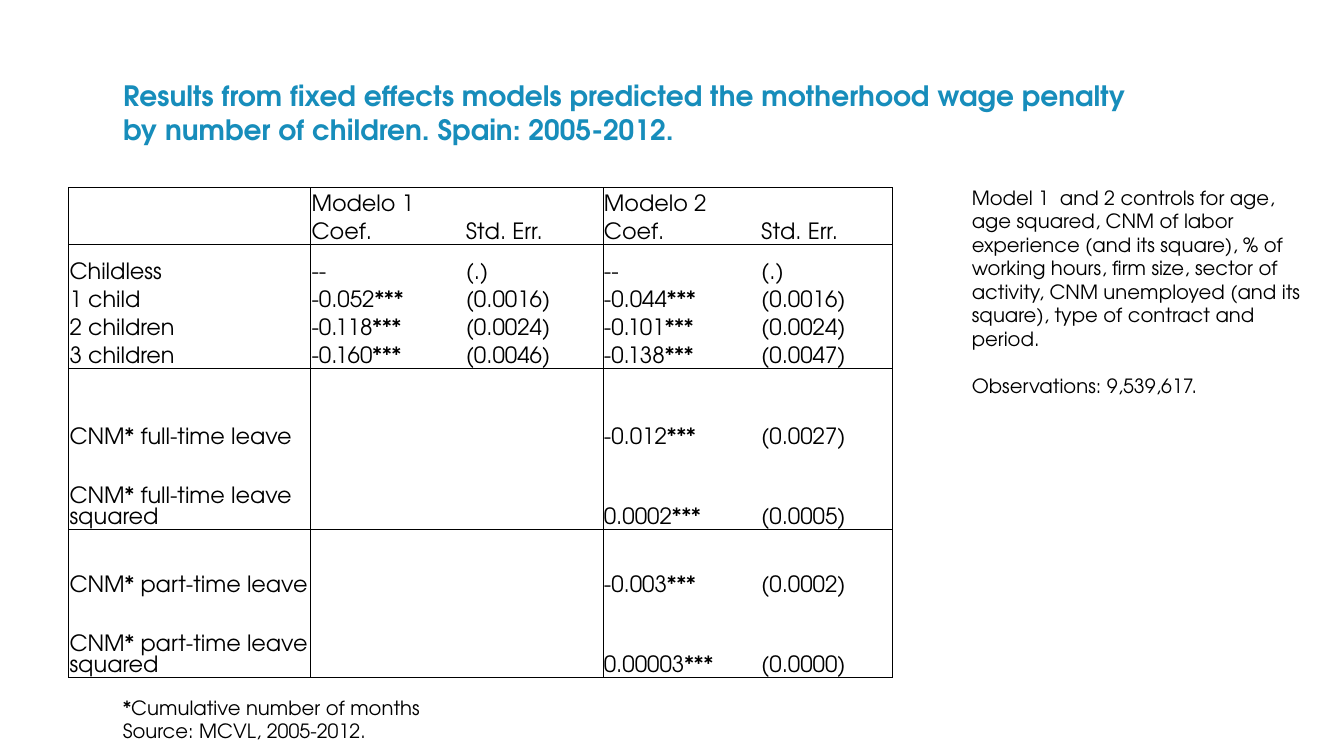
from dataclasses import dataclass

import lxml.etree
import pptx
import pptx.dml.color
import pptx.enum.text
import pptx.oxml.ns
import pptx.util

EMU_PER_PX = 9144  # 100 px to the inch
FONT = "TeX Gyre Adventor"
BLACK = "000000"
BLUE = "178DBB"

TITLE = (
    "Results from fixed effects models predicted the motherhood wage penalty "
    "by number of children. Spain: 2005-2012."
)
CONTROLS = (
    "Model 1  and 2 controls for age, age squared, CNM of labor experience "
    "(and its square), % of working hours, firm size, sector of activity, "
    "CNM unemployed (and its square), type of contract and period."
)

COLUMN_WIDTHS = (240, 153, 137, 156, 131)
RULED_COLUMNS = {0, 1, 3, 5}  # column edges with a vertical line
RULED_ROWS = {0, 2, 6, 8, 10}  # row edges with a horizontal line


@dataclass(frozen=True)
class Note:
    left: int
    top: int
    width: int
    height: int
    paragraphs: tuple[str, ...]
    gap: int = 0


@dataclass(frozen=True)
class ResultRow:
    height: int
    cells: tuple[str, str, str, str, str]


NOTES = (
    Note(954, 179, 357, 222, (CONTROLS, "Observations: 9,539,617."), gap=17),
    Note(112, 685, 533, 57, ("*Cumulative number of months", "Source: MCVL, 2005-2012.")),
)

ROWS = (
    ResultRow(28, ("", "Modelo 1", "", "Modelo 2", "")),
    ResultRow(28, ("", "Coef.", "Std. Err.", "Coef.", "Std. Err.")),
    ResultRow(40, ("Childless", "--", "(.)", "--", "(.)")),
    ResultRow(27, ("1 child", "-0.052***", "(0.0016)", "-0.044***", "(0.0016)")),
    ResultRow(27, ("2 children", "-0.118***", "(0.0024)", "-0.101***", "(0.0024)")),
    ResultRow(27, ("3 children", "-0.160***", "(0.0046)", "-0.138***", "(0.0047)")),
    ResultRow(80, ("CNM* full-time leave", "", "", "-0.012***", "(0.0027)")),
    ResultRow(80, ("CNM* full-time leave squared", "", "", "0.0002***", "(0.0005)")),
    ResultRow(67, ("CNM* part-time leave", "", "", "-0.003***", "(0.0002)")),
    ResultRow(80, ("CNM* part-time leave squared", "", "", "0.00003***", "(0.0000)")),
)


def px(length: int) -> pptx.util.Emu:
    return pptx.util.Emu(length * EMU_PER_PX)


def color(value: str) -> pptx.dml.color.RGBColor:
    return pptx.dml.color.RGBColor.from_string(value)


def write(para, text: str, *, size: int, fill: str = BLACK, bold: bool = False) -> None:
    para.alignment = pptx.enum.text.PP_ALIGN.LEFT
    span = para.add_run()
    span.text = text
    span.font.name = FONT
    span.font.size = pptx.util.Pt(size)
    span.font.bold = bold
    span.font.color.rgb = color(fill)


def place(shape, left: int, top: int, width: int, height: int) -> None:
    shape.left, shape.top = px(left), px(top)
    shape.width, shape.height = px(width), px(height)


def fit_text(frame) -> None:
    frame.word_wrap = True
    frame.auto_size = pptx.enum.text.MSO_AUTO_SIZE.SHAPE_TO_FIT_TEXT
    frame.vertical_anchor = pptx.enum.text.MSO_ANCHOR.TOP


def add_title(page) -> None:
    title = page.shapes.title
    place(title, 112, 73, 1020, 77)
    fit_text(title.text_frame)
    write(title.text_frame.paragraphs[0], TITLE, size=20, fill=BLUE, bold=True)


def add_note(page, note: Note) -> None:
    box = page.shapes.add_textbox(px(note.left), px(note.top), px(note.width), px(note.height))
    frame = box.text_frame
    fit_text(frame)
    for index, text in enumerate(note.paragraphs):
        para = frame.add_paragraph() if index else frame.paragraphs[0]
        para.space_before = pptx.util.Pt(note.gap if index else 0)
        write(para, text, size=14)


def set_borders(cell, row: int, column: int) -> None:
    """Draw the ruled edges of a cell and blank its other edges."""
    qn = pptx.oxml.ns.qn
    properties = cell._tc.get_or_add_tcPr()
    ruled = {
        "a:lnL": column in RULED_COLUMNS,
        "a:lnR": column + 1 in RULED_COLUMNS,
        "a:lnT": row in RULED_ROWS,
        "a:lnB": row + 1 in RULED_ROWS,
    }
    for tag, visible in ruled.items():
        line = lxml.etree.SubElement(properties, qn(tag), w=str(pptx.util.Pt(0.5)))
        if visible:
            fill = lxml.etree.SubElement(line, qn("a:solidFill"))
            lxml.etree.SubElement(fill, qn("a:srgbClr"), val=BLACK)
        else:
            lxml.etree.SubElement(line, qn("a:noFill"))


def fill_cell(cell, text: str, row: int, column: int) -> None:
    set_borders(cell, row, column)
    cell.fill.background()
    cell.margin_left = cell.margin_right = cell.margin_top = px(1)
    cell.margin_bottom = 0
    cell.vertical_anchor = pptx.enum.text.MSO_ANCHOR.BOTTOM
    para = cell.text_frame.paragraphs[0]
    if text:
        write(para, text, size=16)
    else:
        # A small end mark keeps an empty cell from stretching its row.
        lxml.etree.SubElement(para._p, pptx.oxml.ns.qn("a:endParaRPr"), sz="1000")
    if text.endswith("squared"):
        para.line_spacing = pptx.util.Pt(15)


def add_results(page) -> None:
    height = sum(row.height for row in ROWS)
    frame = page.shapes.add_table(
        len(ROWS), len(COLUMN_WIDTHS), px(68), px(186), px(sum(COLUMN_WIDTHS)), px(height)
    )
    table = frame.table
    table.first_row = False
    table.horz_banding = False
    for column, width in enumerate(COLUMN_WIDTHS):
        table.columns[column].width = px(width)
    for index, row in enumerate(ROWS):
        table.rows[index].height = px(row.height)
        for column, text in enumerate(row.cells):
            fill_cell(table.cell(index, column), text, index, column)


def main() -> None:
    deck = pptx.Presentation()
    deck.slide_width, deck.slide_height = px(1333), px(750)
    page = deck.slides.add_slide(deck.slide_layouts.get_by_name("Title Only"))
    add_title(page)
    add_results(page)
    for note in NOTES:
        add_note(page, note)
    deck.save("out.pptx")


if __name__ == "__main__":
    main()
